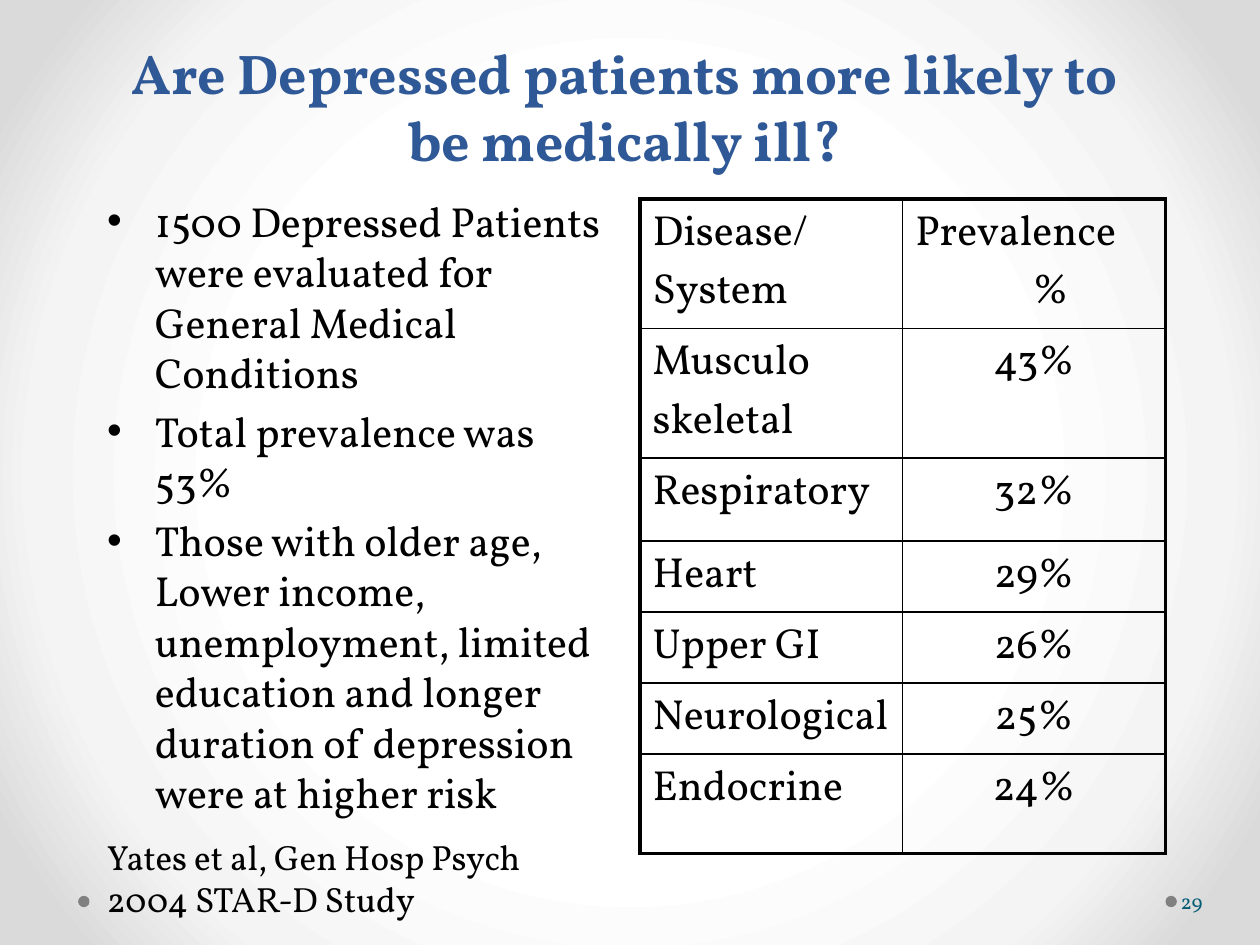
from pptx import Presentation
from pptx.dml.color import RGBColor
from pptx.enum.shapes import MSO_SHAPE as Shape
from pptx.enum.text import MSO_ANCHOR as Anchor, MSO_AUTO_SIZE as AutoSize, PP_ALIGN as Align
from pptx.oxml import parse_xml
from pptx.oxml.ns import nsdecls, qn
from pptx.util import Inches, Pt
from lxml.etree import SubElement

BLACK = RGBColor(0, 0, 0)
BLUE = RGBColor(0x2F, 0x58, 0x97)
TEAL = RGBColor(0x04, 0x5C, 0x75)
GRAY = RGBColor(0x80, 0x80, 0x80)
GRADIENT = [(0, "FFFFFF"), (50, "FFFFFF"), (76, "F4F4F4"), (92, "DADADA"), (100, "DADADA")]
FONT = "Vollkorn"
LEFT, COLUMN, GUTTER = 0.75, 4.17, 0.16
TABLE_LEFT = LEFT + COLUMN + GUTTER
ROW_HEIGHTS = [0.79, 0.62, 0.66, 0.56, 0.47, 0.56, 0.79]
THICK, THIN = Pt(2.25), Pt(1)

FINDINGS = [
    "1500 Depressed Patients were evaluated for General Medical Conditions",
    "Total prevalence was 53%",
    "Those with older age, Lower income, unemployment, limited education "
    "and longer duration of depression were at higher risk",
]
DISEASES = [
    ("Musculo skeletal", "43%"), ("Respiratory", "32%"), ("Heart", "29%"),
    ("Upper GI", "26%"), ("Neurological", "25%"), ("Endocrine", "24%"),
]


def apply(target, **values):
    for name, value in values.items():
        setattr(target, name, value)


def place(box, left, top, width, height):
    apply(box, left=Inches(left), top=Inches(top), width=Inches(width), height=Inches(height))


def write(para, text, size, color=BLACK, bold=False, **layout):
    span = para.add_run()
    span.text = text
    apply(span.font, name=FONT, size=Pt(size), bold=bold)
    span.font.color.rgb = color
    apply(para, **layout)


def paint_background(page):
    stops = "".join(
        f'<a:gs pos="{share * 1000}"><a:srgbClr val="{color}"/></a:gs>' for share, color in GRADIENT
    )
    page.background.fill.solid()
    properties = page.background._cSld.bg.bgPr
    properties.replace(properties[0], parse_xml(
        f'<a:gradFill {nsdecls("a")} rotWithShape="1"><a:gsLst>{stops}</a:gsLst><a:path path="circle">'
        '<a:fillToRect l="50000" t="50000" r="50000" b="50000"/></a:path></a:gradFill>'))


def add_dot(page, left):
    dot = page.shapes.add_shape(Shape.OVAL, Inches(left), Inches(7.11), Inches(0.09), Inches(0.09))
    dot.shadow.inherit = False
    dot.fill.solid()
    dot.fill.fore_color.rgb = GRAY
    dot.line.fill.background()


def add_title(page):
    title = page.shapes.title
    place(title, 0.67, 0.5, 8.58, 0.92)
    apply(title.text_frame, vertical_anchor=Anchor.BOTTOM, word_wrap=True, auto_size=AutoSize.NONE)
    write(title.text_frame.paragraphs[0], "Are Depressed patients more likely to be medically ill?",
          32, BLUE, True, alignment=Align.CENTER)


def add_findings(page):
    body = page.placeholders[1]
    place(body, LEFT, 1.5, COLUMN, 5)
    frame = body.text_frame
    apply(frame, word_wrap=True, auto_size=AutoSize.NONE)
    for index, finding in enumerate(FINDINGS):
        para = frame.add_paragraph() if index else frame.paragraphs[0]
        write(para, finding, 24, space_before=Pt(4.8))
        properties = para._p.get_or_add_pPr()
        properties.set("marL", str(Inches(0.38)))
        properties.set("indent", str(-Inches(0.38)))
        SubElement(properties, qn("a:buFont")).set("typeface", "Arial")
        SubElement(properties, qn("a:buChar")).set("char", "•")


def draw_borders(cell, widths):
    properties = cell._tc.get_or_add_tcPr()
    for index, (side, width) in enumerate(widths.items()):
        properties.insert(index, parse_xml(
            f'<a:{side} {nsdecls("a")} w="{width}"><a:solidFill>'
            f'<a:srgbClr val="{BLACK}"/></a:solidFill></a:{side}>'))


def add_disease_table(page):
    last = len(ROW_HEIGHTS) - 1
    table = page.shapes.add_table(
        last + 1, 2, Inches(TABLE_LEFT), Inches(1.58), Inches(COLUMN), Inches(sum(ROW_HEIGHTS))).table
    apply(table, first_row=False, horz_banding=False)
    for row, height in zip(table.rows, ROW_HEIGHTS):
        row.height = Inches(height)
    for row, values in enumerate([("Disease/ System", "Prevalence"), *DISEASES]):
        for column, value in enumerate(values):
            cell = table.cell(row, column)
            cell.fill.background()
            centred = column == 1 and row > 0
            write(cell.text_frame.paragraphs[0], value, 24,
                  alignment=Align.CENTER if centred else Align.LEFT)
            draw_borders(cell, {
                "lnL": THIN if column else THICK, "lnR": THICK if column else THIN,
                "lnT": THIN if row else THICK, "lnB": THICK if row == last else THIN})
    unit = table.cell(0, 1).text_frame.add_paragraph()
    write(unit, "%", 24, alignment=Align.CENTER)
    unit._p.get_or_add_pPr().set("marL", str(Inches(0.26)))


def add_note(page, area, text, size, color=BLACK, frame_values=None, **layout):
    box = page.shapes.add_textbox(*map(Inches, area))
    apply(box.text_frame, word_wrap=True, **(frame_values or {}))
    write(box.text_frame.paragraphs[0], text, size, color, **layout)


def main():
    deck = Presentation()
    apply(deck, slide_width=Inches(10), slide_height=Inches(7.5))
    page = deck.slides.add_slide(deck.slide_layouts[1])
    paint_background(page)
    for left in (9.25, 0.62):
        add_dot(page, left)
    add_title(page)
    add_findings(page)
    add_disease_table(page)
    add_note(page, (9.34, 6.95, 0.61, 0.4), "29", 12, TEAL,
             {"vertical_anchor": Anchor.MIDDLE, "margin_left": Inches(0.03), "margin_right": Inches(0.05)})
    add_note(page, (LEFT, 6.58, COLUMN, 0.77), "Yates et al, Gen Hosp Psych 2004 STAR-D Study", 20,
             space_before=Pt(10))
    deck.save("out.pptx")


if __name__ == "__main__":
    main()
